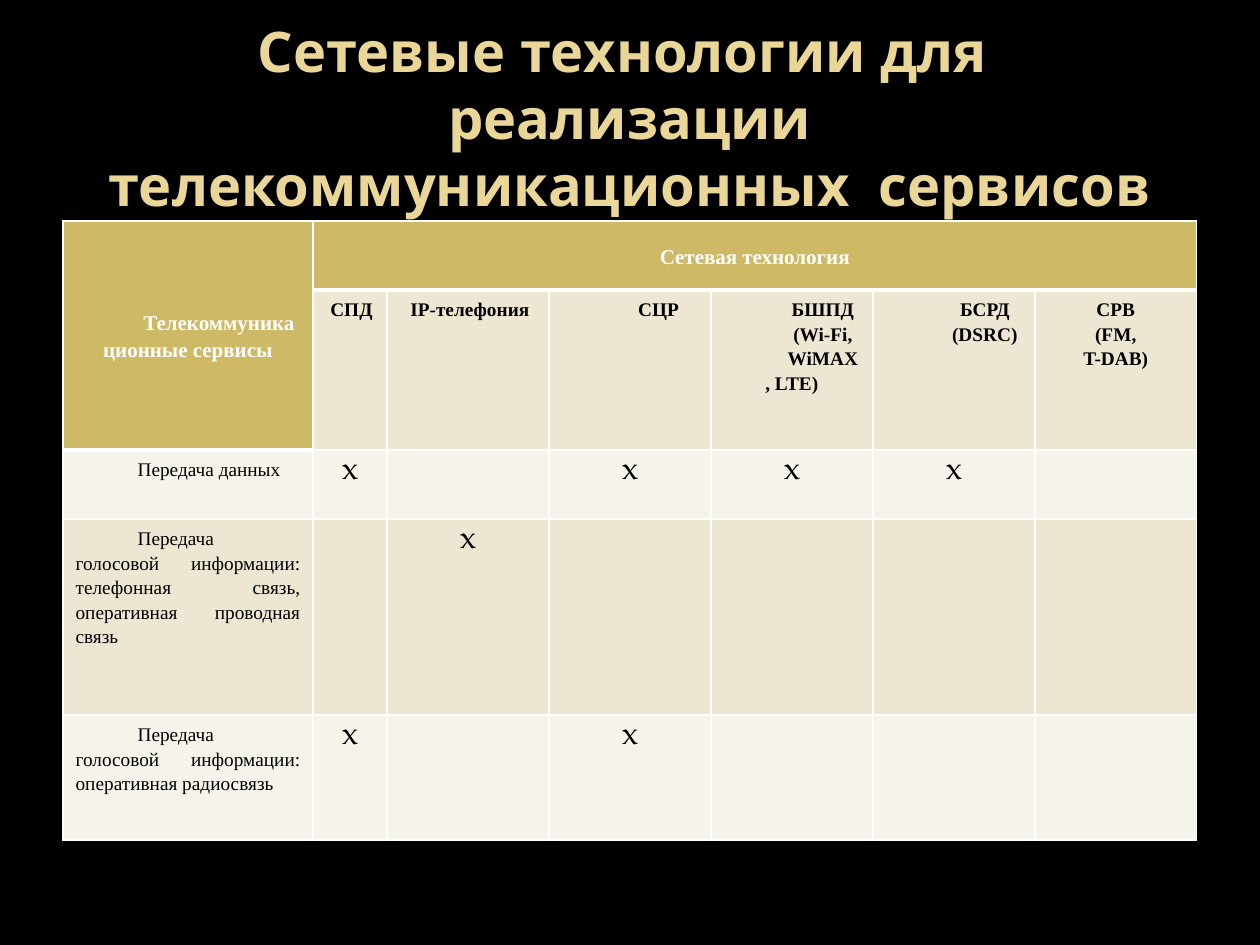
from lxml.etree import SubElement
from pptx import Presentation
from pptx.dml.color import RGBColor
from pptx.enum.text import MSO_ANCHOR, PP_ALIGN
from pptx.oxml.ns import qn
from pptx.util import Emu, Pt

SCALE = 914400 / 126
BLACK = RGBColor(0x00, 0x00, 0x00)
WHITE = RGBColor(0xFF, 0xFF, 0xFF)
SAND = RGBColor(0xEA, 0xD6, 0x96)
GOLD = RGBColor(0xCE, 0xB9, 0x66)
BAND_DARK = RGBColor(0xED, 0xE6, 0xD3)
BAND_LIGHT = RGBColor(0xF6, 0xF3, 0xEA)
SERIF = "Times New Roman"
MARK_FONT = "TeX Gyre Pagella"

COLUMN_WIDTHS = [250, 74, 162, 162, 162, 162, 162]
ROW_HEIGHTS = [69, 160, 69, 196, 125]
INDENT = 62
TECHNOLOGIES = [
    ("СПД", 3),
    ("IP-телефония", 4),
    ("СЦР ", INDENT),
    ("БШПД\n(Wi-Fi,\nWiMAX, LTE)", INDENT),
    ("БСРД\n(DSRC)", INDENT),
    ("СРВ\n(FM,\nT-DAB)", 0),
]
SERVICES = [
    ("Передача данных", {1, 3, 4, 5}),
    ("Передача голосовой информации: телефонная связь, "
     "оперативная проводная связь", {2}),
    ("Передача голосовой информации: оперативная радиосвязь", {1, 3}),
]


def px(length):
    return Emu(round(length * SCALE))


def write(frame, text, size, font, color, bold=False,
          align=PP_ALIGN.CENTER, indent=0, spacing=None):
    frame.text = text
    for paragraph in frame.paragraphs:
        paragraph.alignment = align
        if spacing:
            paragraph.line_spacing = spacing
        if indent:
            properties = paragraph._p.get_or_add_pPr()
            properties.set("marL", "0")
            properties.set("indent", str(px(indent)))
        for run in paragraph.runs:
            run.font.size = Pt(size)
            run.font.name = font
            run.font.bold = bold
            run.font.color.rgb = color


def set_borders(cell, top, bottom):
    properties = cell._tc.get_or_add_tcPr()
    widths = {"a:lnL": 1, "a:lnR": 1, "a:lnT": top, "a:lnB": bottom}
    for position, (side, width) in enumerate(widths.items()):
        line = SubElement(properties, qn(side), w=str(Pt(width)))
        fill = SubElement(line, qn("a:solidFill"))
        SubElement(fill, qn("a:srgbClr"), val=str(WHITE))
        properties.insert(position, line)


def paint_grid(table):
    for r in range(len(ROW_HEIGHTS)):
        for c in range(len(COLUMN_WIDTHS)):
            cell = table.cell(r, c)
            is_header = r == 0 or (r == 1 and c == 0)
            below_header = (r == 2) if c == 0 else (r == 1)
            band = BAND_DARK if r % 2 else BAND_LIGHT
            cell.fill.solid()
            cell.fill.fore_color.rgb = GOLD if is_header else band
            set_borders(cell, 3 if below_header else 1, 3 if is_header else 1)


def add_title(slide, left, top, width, height):
    frame = slide.shapes.add_textbox(
        px(left), px(top), px(width), px(height)).text_frame
    frame.word_wrap = True
    frame.vertical_anchor = MSO_ANCHOR.MIDDLE
    write(frame, "Сетевые технологии для  реализации "
          "телекоммуникационных  сервисов", 32, "Noto Sans", SAND, bold=True)


def add_service_table(slide, left, top, width, height):
    table = slide.shapes.add_table(
        len(ROW_HEIGHTS), len(COLUMN_WIDTHS),
        px(left), px(top), px(width), px(height)).table
    table.first_row = False
    table.horz_banding = False
    for column, column_width in zip(table.columns, COLUMN_WIDTHS):
        column.width = px(column_width * width / sum(COLUMN_WIDTHS))
    for row, row_height in zip(table.rows, ROW_HEIGHTS):
        row.height = px(row_height * height / sum(ROW_HEIGHTS))
    paint_grid(table)

    services_head, technology_head = table.cell(0, 0), table.cell(0, 1)
    services_head.merge(table.cell(1, 0))
    technology_head.merge(table.cell(0, 6))
    for head, text, indent in [
        (services_head, "Телекоммуникационные сервисы", INDENT),
        (technology_head, "Сетевая технология", 0),
    ]:
        head.vertical_anchor = MSO_ANCHOR.MIDDLE
        write(head.text_frame, text, 12, SERIF, WHITE, bold=True,
              indent=indent, spacing=1.15)

    for c, (technology, indent) in enumerate(TECHNOLOGIES, start=1):
        write(table.cell(1, c).text_frame, technology, 11, SERIF, BLACK,
              bold=True, indent=indent, spacing=1.15)

    for r, (service, marked_columns) in enumerate(SERVICES, start=2):
        write(table.cell(r, 0).text_frame, service, 11, SERIF, BLACK,
              align=PP_ALIGN.JUSTIFY, indent=INDENT, spacing=1.15)
        for c in marked_columns:
            write(table.cell(r, c).text_frame, "х", 18, MARK_FONT, BLACK)


def main():
    presentation = Presentation()
    presentation.slide_width = px(1260)
    presentation.slide_height = px(945)
    slide = presentation.slides.add_slide(presentation.slide_layouts[6])
    slide.background.fill.solid()
    slide.background.fill.fore_color.rgb = BLACK
    add_title(slide, 63, 38, 1134, 158)
    add_service_table(slide, 63, 221, 1134, 619)
    presentation.save("out.pptx")


if __name__ == "__main__":
    main()
